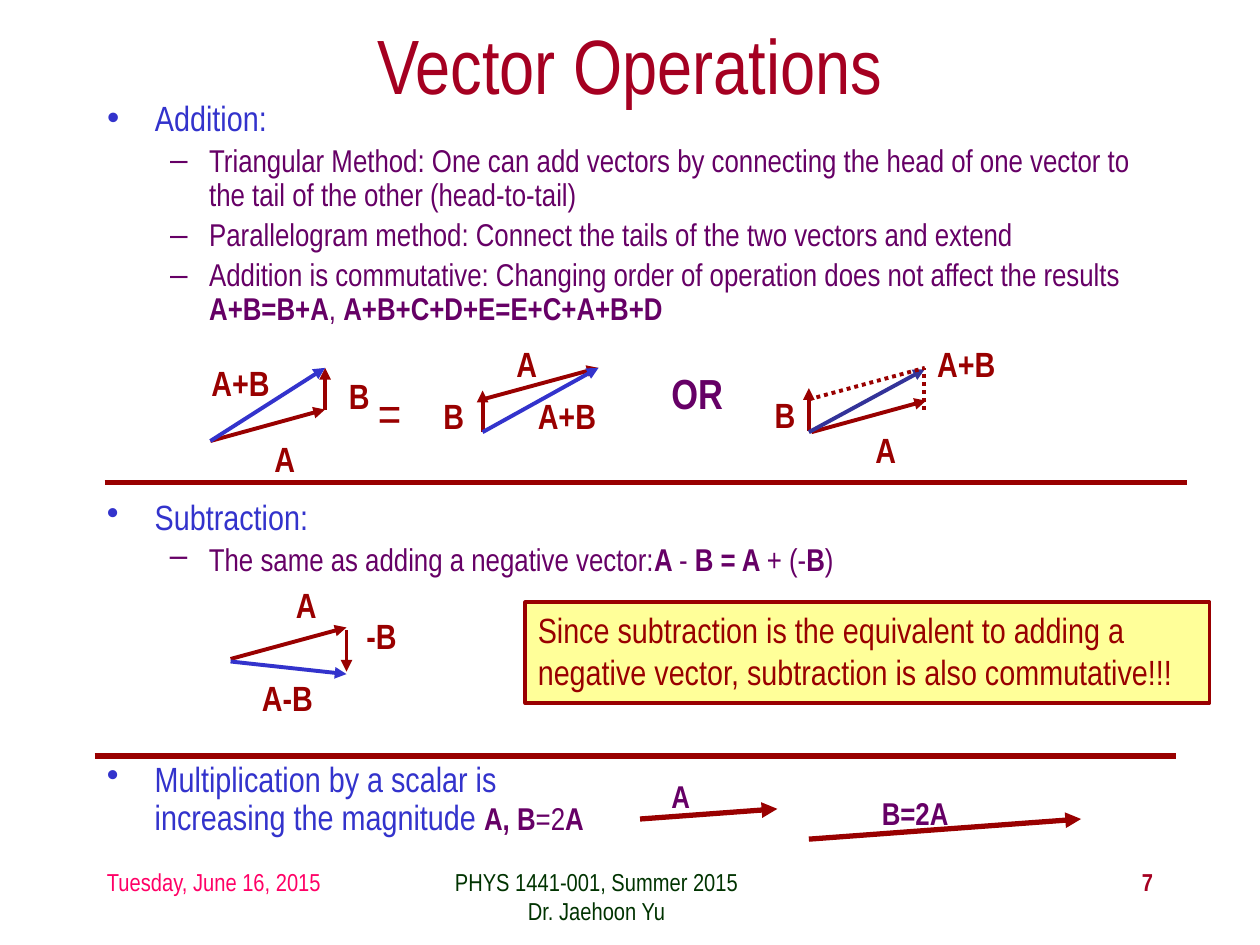
from lxml import etree
from pptx import Presentation
from pptx import util as u
from pptx.dml.color import RGBColor
from pptx.enum import dml, shapes, text
from pptx.oxml.ns import qn

FONT = "Arial Narrow"
COLORS = {
    "title": "A50021", "blue": "3333CC", "navy": "333399", "purple": "660066",
    "red": "990000", "yellow": "FFFF99", "pink": "FF0066", "green": "003300",
}
LEVELS = [("•", 0.38, -0.38, 4), ("–", 0.81, -0.31, 3.6)]


def rgb(name):
    return RGBColor.from_string(COLORS[name])


def add_run(p, words, size, color, bold=False):
    r = p.add_run()
    r.text = words
    r.font.name, r.font.size, r.font.bold = FONT, u.Pt(size), bold
    r.font.color.rgb = rgb(color)


def add_text(slide, box, words, size, color, bold=False, align=None, wrap=False):
    sp = slide.shapes.add_textbox(*map(u.Inches, box))
    tf = sp.text_frame
    tf.word_wrap = wrap
    p = tf.paragraphs[0]
    p.alignment = align
    add_run(p, words, size, color, bold)
    return tf


def add_line(slide, start, end, color="red", width=2.25, head=True, dotted=False):
    c = slide.shapes.add_connector(
        shapes.MSO_CONNECTOR.STRAIGHT, *map(u.Inches, (*start, *end)))
    c.line.color.rgb = rgb(color)
    c.line.width = u.Pt(width)
    if dotted:
        c.line.dash_style = dml.MSO_LINE.ROUND_DOT
    if head:
        etree.SubElement(c.line._get_or_add_ln(), qn("a:tailEnd"), type="triangle")
    etree.SubElement(c._element.spPr, qn("a:effectLst"))


def place(sp, box):
    sp.left, sp.top, sp.width, sp.height = map(u.Inches, box)


def fill_bullets(tf, items):
    tf.word_wrap = True
    tf.auto_size = text.MSO_AUTO_SIZE.NONE
    for i, (level, runs) in enumerate(items):
        p = tf.paragraphs[0] if i == 0 else tf.add_paragraph()
        mark, margin, indent, gap = LEVELS[level]
        p.level = level
        pPr = p._p.get_or_add_pPr()
        pPr.set("marL", str(u.Inches(margin)))
        pPr.set("indent", str(u.Inches(indent)))
        etree.SubElement(pPr, qn("a:buChar"), char=mark)
        p.line_spacing = 0.9
        p.space_before = u.Pt(gap if i else 0)
        for run in runs:
            add_run(p, *run)


def bullet_box(slide, box, items):
    fill_bullets(slide.shapes.add_textbox(*map(u.Inches, box)).text_frame, items)


def diagram(slide, left, top, arrows, labels, size=20, color="red"):
    for x1, y1, x2, y2, style in arrows:
        add_line(slide, (left + x1, top + y1), (left + x2, top + y2), **style)
    for words, x, y, w in labels:
        add_text(slide, (left + x, top + y, w, 0.43), words, size, color, True)


def title(slide, box):
    sp = slide.shapes.title
    place(sp, box)
    tf = sp.text_frame
    tf.auto_size = text.MSO_AUTO_SIZE.NONE
    tf.vertical_anchor = text.MSO_ANCHOR.MIDDLE
    p = tf.paragraphs[0]
    p.alignment = text.PP_ALIGN.CENTER
    add_run(p, "Vector Operations", 44, "title")


def addition(slide, box):
    left, top = box[:2]
    sub = (18, "purple")
    body = slide.placeholders[1]
    place(body, box)
    fill_bullets(body.text_frame, [
        (0, [("Addition:", 20, "blue")]),
        (1, [("Triangular Method: One can add vectors by connecting the head of "
              "one vector to the tail of the other (head-to-tail)", *sub)]),
        (1, [("Parallelogram method: Connect the tails of the two vectors and extend", *sub)]),
        (1, [("Addition is commutative: Changing order of operation does not "
              "affect the results ", *sub),
             ("A+B=B+A", *sub, True), (", ", *sub),
             ("A+B+C+D+E=E+C+A+B+D", *sub, True)]),
    ])
    blue, dots = {"color": "blue"}, {"head": False, "dotted": True}
    diagram(slide, left + 0.92, top + 2.75,
            [(0, 0, 0.91, -0.25, {}), (0.91, -0.25, 0.91, -0.58, {}),
             (0, 0, 0.91, -0.58, blue)],
            [("A", 0.41, -0.08, 0.37), ("B", 1, -0.58, 0.37), ("A+B", -0.09, -0.68, 0.66)])
    add_text(slide, (left + 2.15, top + 2.24, 0.39, 0.57), "=", 28, "red")
    diagram(slide, left + 3.08, top + 2.68,
            [(0, -0.26, 0.92, -0.51, {}), (0, 0, 0, -0.33, {}),
             (0, 0, 0.92, -0.51, blue)],
            [("A", 0.17, -0.76, 0.37), ("B", -0.41, -0.35, 0.37), ("A+B", 0.34, -0.35, 0.66)])
    add_text(slide, (left + 4.48, top + 2.12, 0.61, 0.5), "OR", 24, "purple", True)
    diagram(slide, left + 5.67, top + 2.68,
            [(0.02, 0, 0.93, -0.25, {}), (0, -0.01, 0, -0.35, {}),
             (0, 0, 0.92, -0.5, {"color": "navy"}),
             (0.91, -0.18, 0.91, -0.51, dots), (0, -0.26, 0.92, -0.51, dots)],
            [("A", 0.43, -0.08, 0.37), ("B", -0.37, -0.36, 0.37), ("A+B", 0.92, -0.76, 0.66)])


def note(slide, box):
    sp = slide.shapes.add_shape(shapes.MSO_SHAPE.RECTANGLE, *map(u.Inches, box))
    sp.shadow.inherit = False
    sp.fill.solid()
    sp.fill.fore_color.rgb = rgb("yellow")
    sp.line.color.rgb = rgb("red")
    sp.line.width = u.Pt(2.25)
    tf = sp.text_frame
    tf.word_wrap = True
    tf.vertical_anchor = text.MSO_ANCHOR.TOP
    p = tf.paragraphs[0]
    p.alignment = text.PP_ALIGN.LEFT
    add_run(p, "Since subtraction is the equivalent to adding a negative vector, "
               "subtraction is also commutative!!!", 20, "red")


def subtraction(slide, box):
    left, top = box[:2]
    sub = (18, "purple")
    bullet_box(slide, box, [
        (0, [("Subtraction:", 20, "blue")]),
        (1, [("The same as adding a negative vector:", *sub), ("A ", *sub, True),
             ("- ", *sub), ("B = A ", *sub, True), ("+ (-", *sub),
             ("B", *sub, True), (")", *sub)]),
    ])
    diagram(slide, left + 1.08, top + 1.33,
            [(0, -0.02, 0.92, -0.27, {}), (0.92, -0.25, 0.92, 0.08, {}),
             (0, 0, 0.92, 0.1, {"color": "blue"})],
            [("A", 0.42, -0.67, 0.37), ("-B", 0.98, -0.42, 0.44), ("A-B", 0.15, 0.07, 0.61)])
    note(slide, (left + 3.42, top + 0.86, 5.43, 0.8))


def multiplication(slide, box):
    left, top = box[:2]
    sub = (18, "purple")
    bullet_box(slide, box, [
        (0, [("Multiplication by a scalar is increasing the magnitude ", 20, "blue"),
             ("A, B", *sub, True), ("=2", *sub), ("A", *sub, True)]),
    ])
    thick = {"width": 3}
    diagram(slide, left + 4.33, top + 0.5,
            [(0, 0, 1.09, -0.08, thick), (1.34, 0.16, 3.5, 0, thick)],
            [("A", 0.15, -0.38, 0.35), ("B=2A", 1.82, -0.25, 0.73)], *sub)


def footer(slide, left, top):
    add_text(slide, (left, top, 2.08, 0.5), "Tuesday, June 16, 2015", 14, "pink", wrap=True)
    center = text.PP_ALIGN.CENTER
    tf = add_text(slide, (left + 2.67, top, 3.17, 0.5), "PHYS 1441-001, Summer 2015",
                  14, "green", align=center, wrap=True)
    tf.paragraphs[0]._p.get_or_add_pPr().set("marR", str(u.Inches(0.54)))
    p = tf.add_paragraph()
    p.alignment = center
    add_run(p, "Dr. Jaehoon Yu", 14, "green")
    add_text(slide, (left + 6.42, top, 2.08, 0.5), "7", 14, "title", True,
             text.PP_ALIGN.RIGHT, True)


def main():
    prs = Presentation()
    prs.slide_width, prs.slide_height = u.Inches(10), u.Inches(7.5)
    slide = prs.slides.add_slide(prs.slide_layouts[1])
    title(slide, (0.75, 0.17, 8.5, 0.67))
    addition(slide, (0.75, 0.75, 8.5, 1.83))
    subtraction(slide, (0.75, 3.92, 8.5, 0.83))
    multiplication(slide, (0.75, 6, 4, 0.67))
    for x1, x2, y in ((0.83, 9.42, 3.83), (0.75, 9.33, 6)):
        add_line(slide, (x1, y), (x2, y), width=3, head=False)
    footer(slide, 0.75, 6.83)
    prs.save("out.pptx")


if __name__ == "__main__":
    main()
